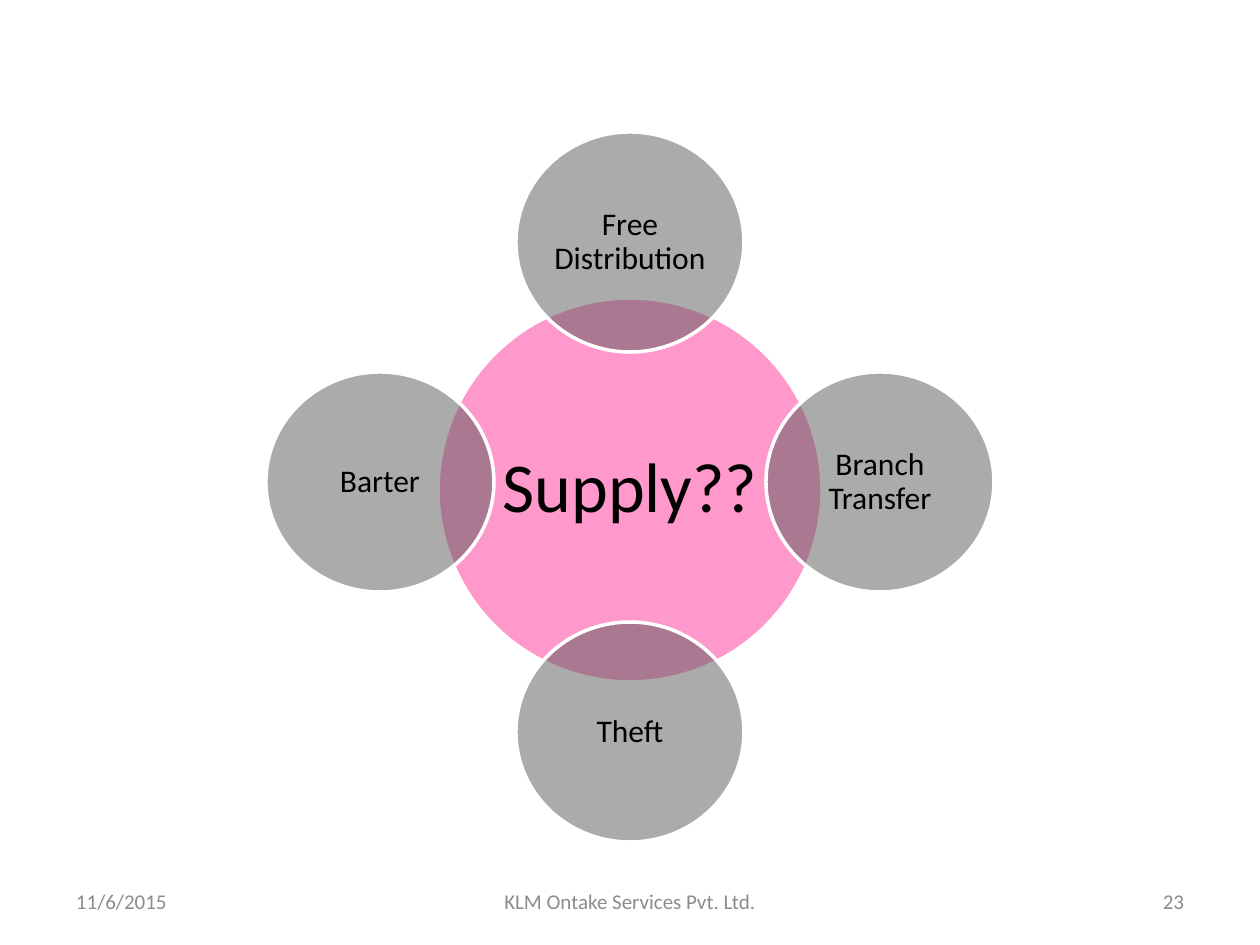
import lxml.etree
import pptx
import pptx.util
import pptx.dml.color
import pptx.enum.shapes
import pptx.enum.text
import pptx.oxml.ns

THEME = {
    "font": "Calibri",
    "hub": "FF3399",
    "satellite": "595959",
    "outline": "FFFFFF",
    "text": "000000",
    "footer": "8C8C8C",
    "hub_size": 40,
    "satellite_size": 18,
    "footer_size": 12,
}
SCALE = pptx.util.Inches(1) / 126
ALIGN = pptx.enum.text.PP_ALIGN


def px(*lengths):
    return [round(length * SCALE) for length in lengths]


def write_text(shape, text, size, color, align=ALIGN.CENTER, inset=(13, 6), line_spacing=1.0):
    frame = shape.text_frame
    frame.word_wrap = True
    frame.vertical_anchor = pptx.enum.text.MSO_ANCHOR.MIDDLE
    frame.margin_left, frame.margin_top = px(*inset)
    frame.margin_right, frame.margin_bottom = px(*inset)
    paragraph = frame.paragraphs[0]
    paragraph.alignment = align
    paragraph.line_spacing = line_spacing
    run = paragraph.add_run()
    run.text = text
    run.font.name = THEME["font"]
    run.font.size = pptx.util.Pt(size)
    run.font.color.rgb = pptx.dml.color.RGBColor.from_string(color)


presentation = pptx.Presentation()
presentation.slide_width, presentation.slide_height = px(1260, 945)
slide = presentation.slides.add_slide(presentation.slide_layouts[6])

circles = [("Supply??", 630, 490, 384, 384, "hub", 8)]
for label, center_x, center_y in [
    ("Free Distribution", 630, 242),
    ("Branch Transfer", 880, 482),
    ("Theft", 630, 732),
    ("Barter", 380, 482),
]:
    circles.append((label, center_x, center_y, 228, 220, "satellite", 4))

for label, center_x, center_y, width, height, role, inset in circles:
    shape = slide.shapes.add_shape(
        pptx.enum.shapes.MSO_SHAPE.OVAL,
        *px(center_x - width / 2, center_y - height / 2, width, height),
    )
    shape.shadow.inherit = False
    shape.fill.solid()
    shape.fill.fore_color.rgb = pptx.dml.color.RGBColor.from_string(THEME[role])
    solid_fill = shape._element.spPr.find(pptx.oxml.ns.qn("a:solidFill"))
    lxml.etree.SubElement(solid_fill[0], pptx.oxml.ns.qn("a:alpha"), val="50000")
    shape.line.color.rgb = pptx.dml.color.RGBColor.from_string(THEME["outline"])
    shape.line.width = pptx.util.Pt(2)
    write_text(shape, label, size=THEME[role + "_size"], color=THEME["text"],
               inset=(inset, inset), line_spacing=0.9)

for text, left, width, align in [
    ("11/6/2015", 63, 294, ALIGN.LEFT),
    ("KLM Ontake Services Pvt. Ltd.", 430, 400, ALIGN.CENTER),
    ("23", 903, 294, ALIGN.RIGHT),
]:
    footer = slide.shapes.add_textbox(*px(left, 876, width, 50))
    write_text(footer, text, size=THEME["footer_size"], color=THEME["footer"], align=align)

presentation.save("out.pptx")
